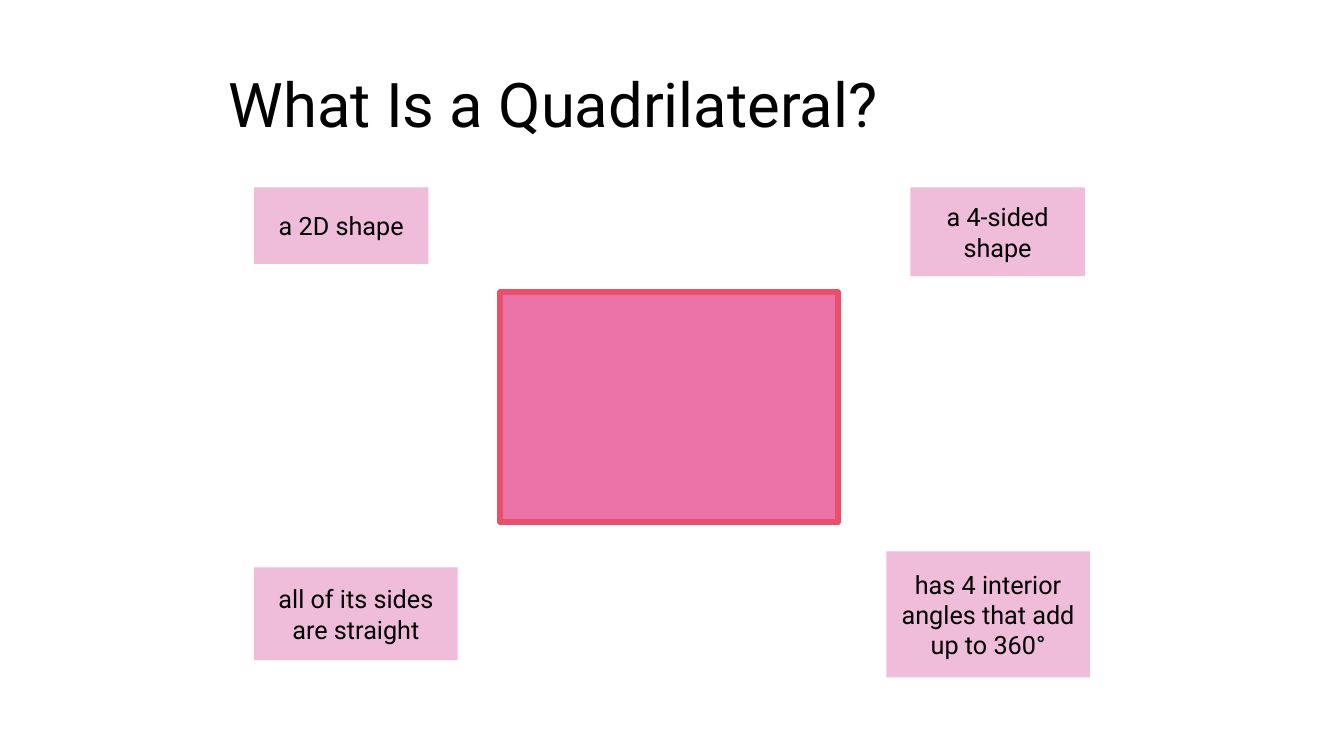
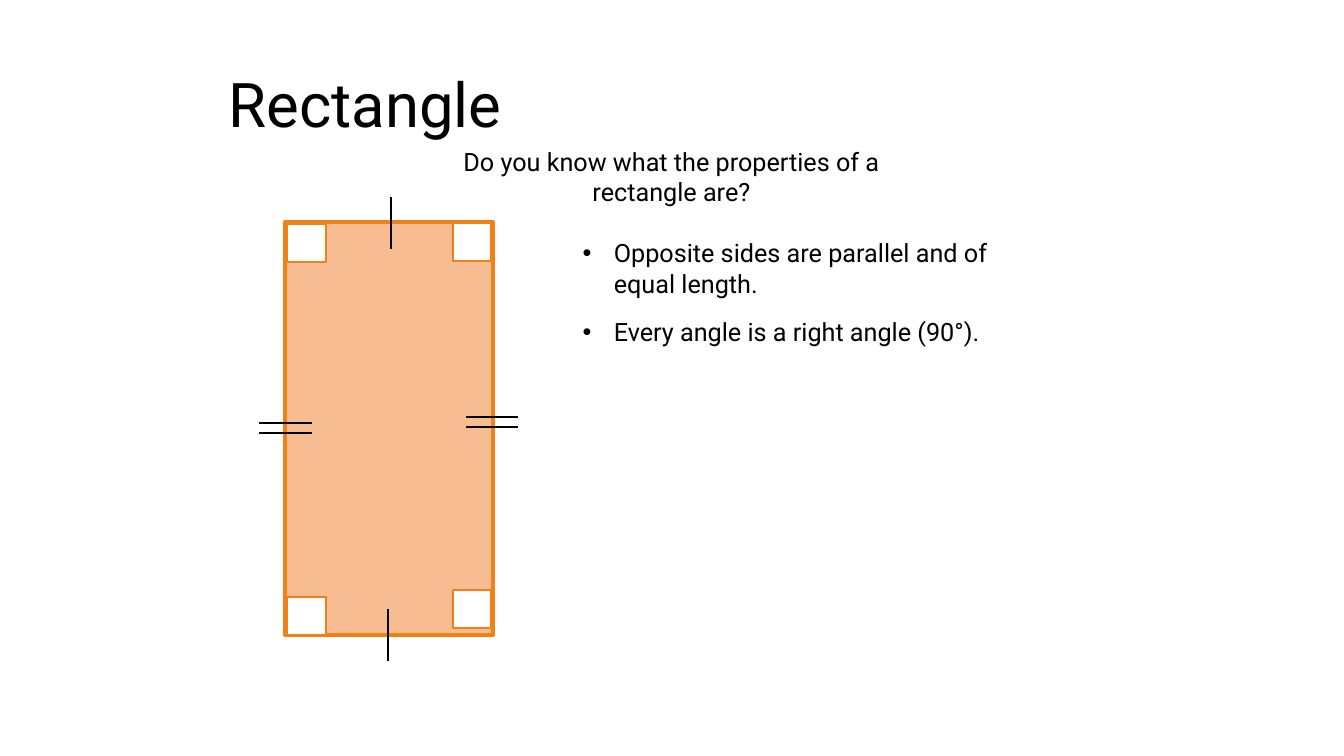
import pptx
import pptx.dml.color
import pptx.enum.shapes
import pptx.enum.text
import pptx.oxml.ns
import pptx.util
from lxml import etree
from pptx.util import Inches

RGBColor = pptx.dml.color.RGBColor
ALIGN = pptx.enum.text.PP_ALIGN
ANCHOR = pptx.enum.text.MSO_ANCHOR

BLACK = RGBColor(0x00, 0x00, 0x00)
WHITE = RGBColor(0xFF, 0xFF, 0xFF)
PINK = RGBColor(0xEC, 0x73, 0xA8)
PALE_PINK = RGBColor(0xEF, 0xBC, 0xD9)
RED = RGBColor(0xE9, 0x50, 0x6C)
PEACH = RGBColor(0xF7, 0xBC, 0x92)
ORANGE = RGBColor(0xF0, 0x81, 0x15)

FONT = "Roboto"
TITLE_SIZE = 44
BODY_SIZE = 18
TITLE_AREA = (2.17, 0.52, 8.99, 1.09)

QUADRILATERAL_TITLE = "What Is a Quadrilateral?"
QUADRILATERAL_AREA = (4.96, 2.9, 3.35, 2.28)
FACTS = [
    ("a 2D shape", (2.52, 1.86, 1.73, 0.76)),
    ("all of its sides are straight", (2.52, 5.63, 2.02, 0.92)),
    ("has 4 interior angles that add up to 360°", (8.79, 5.47, 2.02, 1.25)),
    ("a 4-sided\vshape", (9.03, 1.86, 1.73, 0.88)),
]

RECTANGLE_TITLE = "Rectangle"
RECTANGLE_AREA = (2.83, 2.2, 2.06, 4.1)
QUESTION = "Do you know what the properties of a rectangle are?"
QUESTION_AREA = (4.16, 1.4, 5, 0.71)
PROPERTIES = [
    "Opposite sides are parallel and of equal length.",
    "Every angle is a right angle (90°).",
]
PROPERTIES_AREA = (5.68, 2.31, 4.55, 1.18)
BULLET_INDENT = 0.31
CORNER_SIZE = 0.38
CORNERS = [(2.85, 2.22), (4.49, 2.21), (2.85, 5.92), (4.49, 5.85)]
TICK_LENGTH = 0.52
TICK_GAP = 0.1
SINGLE_TICKS = [(3.88, 1.95), (3.85, 6.04)]
DOUBLE_TICKS = [(4.62, 4.14), (2.57, 4.2)]


def style_paragraph(para, size, align):
    para.alignment = align
    para.font.name = FONT
    para.font.size = pptx.util.Pt(size)
    para.font.color.rgb = BLACK


def add_text(page, area, lines, size=BODY_SIZE, align=ALIGN.LEFT, anchor=ANCHOR.TOP):
    box = page.shapes.add_textbox(*map(Inches, area))
    frame = box.text_frame
    frame.word_wrap = True
    frame.vertical_anchor = anchor
    frame.text = "\n".join(lines)
    for para in frame.paragraphs:
        style_paragraph(para, size, align)
    return frame


def add_rectangle(page, area, fill, line=None, width=0):
    shape = page.shapes.add_shape(
        pptx.enum.shapes.MSO_SHAPE.RECTANGLE, *map(Inches, area))
    shape.shadow.inherit = False
    shape.fill.solid()
    shape.fill.fore_color.rgb = fill
    if line is None:
        shape.line.fill.background()
    else:
        shape.line.color.rgb = line
        shape.line.width = pptx.util.Pt(width)
    return shape


def add_fact(page, text, area):
    frame = add_rectangle(page, area, PALE_PINK).text_frame
    frame.word_wrap = True
    frame.vertical_anchor = ANCHOR.MIDDLE
    frame.margin_left = frame.margin_right = Inches(0.15)
    frame.text = text
    style_paragraph(frame.paragraphs[0], BODY_SIZE, ALIGN.CENTER)


def add_tick(page, left, top, across=0, down=0):
    tick = page.shapes.add_connector(
        pptx.enum.shapes.MSO_CONNECTOR.STRAIGHT,
        *map(Inches, (left, top, left + across, top + down)))
    tick.line.color.rgb = BLACK
    tick.line.width = pptx.util.Pt(1.5)
    etree.SubElement(tick._element.spPr, pptx.oxml.ns.qn("a:effectLst"))


def add_bullet(para):
    para.space_after = pptx.util.Pt(13)
    properties = para._p.get_or_add_pPr()
    properties.set("marL", str(Inches(BULLET_INDENT)))
    properties.set("indent", str(-Inches(BULLET_INDENT)))
    etree.SubElement(properties, pptx.oxml.ns.qn("a:buFont"), typeface="Arial")
    etree.SubElement(properties, pptx.oxml.ns.qn("a:buChar"), char="•")


def add_page(deck, title):
    page = deck.slides.add_slide(deck.slide_layouts[6])
    frame = add_text(page, TITLE_AREA, [title], TITLE_SIZE, anchor=ANCHOR.MIDDLE)
    frame.paragraphs[0].line_spacing = 0.9
    return page


def build_quadrilateral(deck):
    page = add_page(deck, QUADRILATERAL_TITLE)
    add_rectangle(page, QUADRILATERAL_AREA, PINK, RED, 4.5)
    for text, area in FACTS:
        add_fact(page, text, area)


def build_rectangle(deck):
    page = add_page(deck, RECTANGLE_TITLE)
    add_rectangle(page, RECTANGLE_AREA, PEACH, ORANGE, 3)
    for left, top in DOUBLE_TICKS:
        for offset in (0, TICK_GAP):
            add_tick(page, left, top + offset, across=TICK_LENGTH)
    for left, top in SINGLE_TICKS:
        add_tick(page, left, top, down=TICK_LENGTH)
    add_text(page, QUESTION_AREA, [QUESTION], align=ALIGN.CENTER)
    for para in add_text(page, PROPERTIES_AREA, PROPERTIES).paragraphs:
        add_bullet(para)
    for left, top in CORNERS:
        add_rectangle(page, (left, top, CORNER_SIZE, CORNER_SIZE), WHITE, ORANGE, 1.5)


def main():
    deck = pptx.Presentation()
    deck.slide_width = Inches(13.33)
    deck.slide_height = Inches(7.5)
    build_quadrilateral(deck)
    build_rectangle(deck)
    deck.save("out.pptx")


if __name__ == "__main__":
    main()
